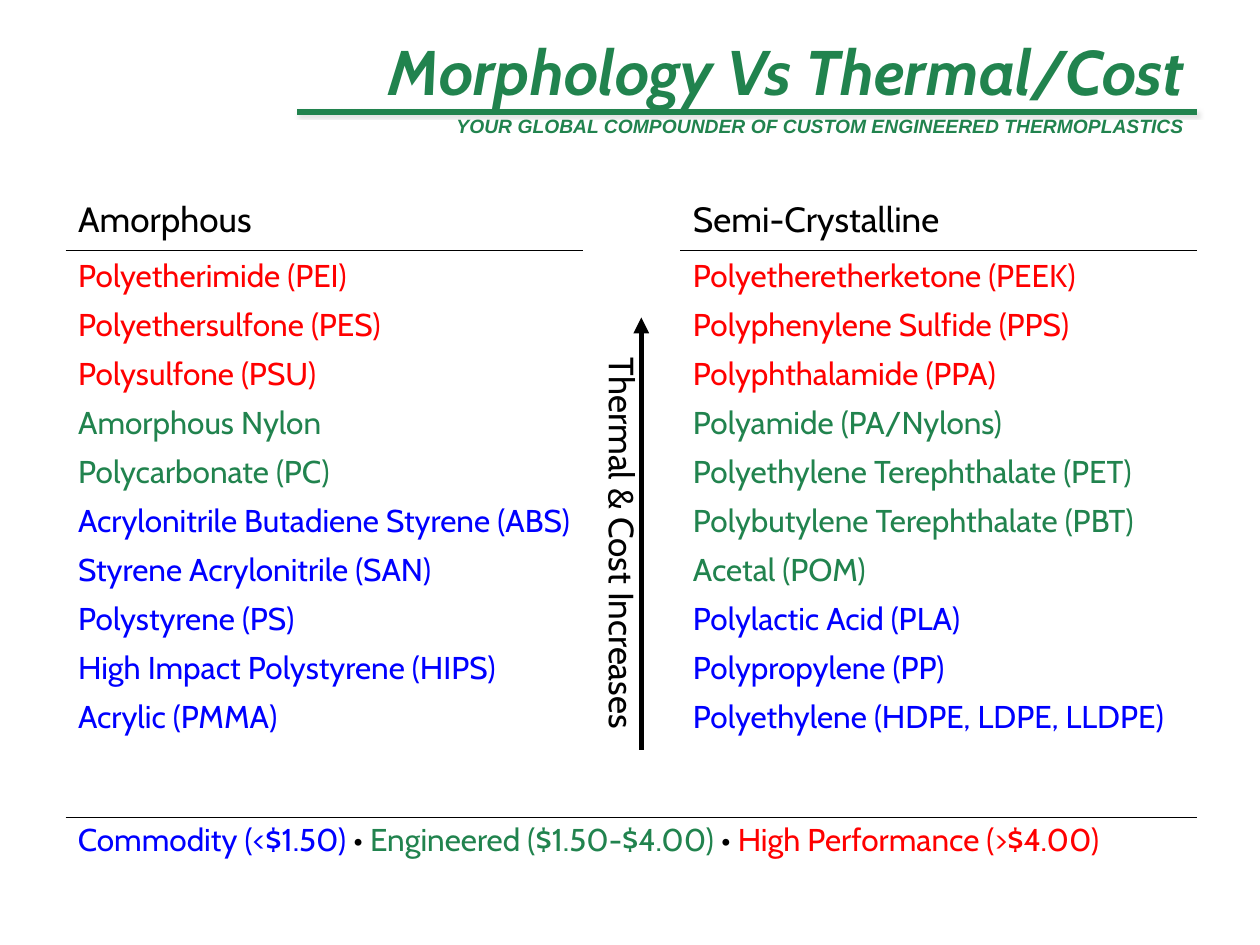
from dataclasses import dataclass

from lxml.etree import SubElement
from pptx import Presentation
from pptx.dml.color import RGBColor
from pptx.enum.shapes import MSO_CONNECTOR
from pptx.enum.text import MSO_ANCHOR, MSO_AUTO_SIZE, PP_ALIGN
from pptx.oxml.ns import qn
from pptx.util import Inches, Pt


@dataclass(frozen=True)
class Theme:
    black: str = "000000"
    green: str = "21834E"
    red: str = "FF0000"
    blue: str = "0000FF"
    shade: str = "808080"
    face: str = "Cabin"
    tagline_face: str = "Arial"
    title: int = 36
    heading: int = 20
    body: int = 18
    tagline: int = 11
    rule: int = 3
    border: int = 1
    plain_table: str = "{2D5ABB26-0587-4C30-8999-92F81FD0307C}"


class SlideBuilder:
    COLUMNS, ROWS = 100, 75

    def __init__(self, deck, theme):
        self.theme = theme
        self.column = deck.slide_width / self.COLUMNS
        self.row = deck.slide_height / self.ROWS
        self.slide = deck.slides.add_slide(deck.slide_layouts[6])

    def across(self, columns):
        return round(columns * self.column)

    def down(self, rows):
        return round(rows * self.row)

    def area(self, left, top, width, height):
        return self.across(left), self.down(top), self.across(width), self.down(height)

    def fill_paragraph(self, paragraph, runs, size, face=None, layout=None, **emphasis):
        for name, value in (layout or {}).items():
            setattr(paragraph, name, value)
        style = {"size": Pt(size), "name": face or self.theme.face, **emphasis}
        for words, color in runs:
            run = paragraph.add_run()
            run.text = words
            for name, value in style.items():
                setattr(run.font, name, value)
            run.font.color.rgb = RGBColor.from_string(color)

    def text(self, area, runs, size, frame_format=None, direction=None, **style):
        frame = self.slide.shapes.add_textbox(*self.area(*area)).text_frame
        settings = {"word_wrap": True, "auto_size": MSO_AUTO_SIZE.SHAPE_TO_FIT_TEXT}
        settings.update(frame_format or {})
        for name, value in settings.items():
            setattr(frame, name, value)
        if direction:
            frame._txBody.bodyPr.set("vert", direction)
        self.fill_paragraph(frame.paragraphs[0], runs, size, **style)

    def line(self, start, end, color, arrow=False, shadow=False):
        connector = self.slide.shapes.add_connector(
            MSO_CONNECTOR.STRAIGHT,
            self.across(start[0]), self.down(start[1]),
            self.across(end[0]), self.down(end[1]))
        connector.line.width = Pt(self.theme.rule)
        connector.line.color.rgb = RGBColor.from_string(color)
        if arrow:
            SubElement(connector.line._ln, qn("a:tailEnd"), type="triangle")
        effects = SubElement(connector._element.spPr, qn("a:effectLst"))
        if shadow:
            outer = SubElement(effects, qn("a:outerShdw"), blurRad=str(Pt(2)),
                               dist=str(Pt(1)), dir=str(45 * 60000))
            shade = SubElement(outer, qn("a:srgbClr"), val=self.theme.shade)
            SubElement(shade, qn("a:alpha"), val="25000")

    def table(self, left, top, widths, heights):
        area = self.area(left, top, sum(widths), sum(heights))
        graphic = self.slide.shapes.add_table(len(heights), len(widths), *area)
        table = graphic.table
        for name in ("first_row", "horz_banding"):
            setattr(table, name, False)
        table._tbl.tblPr.find(qn("a:tableStyleId")).text = self.theme.plain_table
        for column, width in zip(table.columns, widths):
            column.width = self.across(width)
        for row, height in zip(table.rows, heights):
            row.height = self.down(height)
        return table

    def cell(self, cell, lines=(), size=18, borders=(), space_after=0):
        for index, (words, color) in enumerate(lines):
            frame = cell.text_frame
            paragraph = frame.add_paragraph() if index else frame.paragraphs[0]
            self.fill_paragraph(paragraph, [(words, color)], size,
                                layout={"space_after": Pt(space_after)})
        properties = cell._tc.get_or_add_tcPr()
        for side in borders:
            edge = SubElement(properties, qn(f"a:ln{side}"), w=str(Pt(self.theme.border)))
            paint = SubElement(edge, qn("a:solidFill"))
            SubElement(paint, qn("a:srgbClr"), val=self.theme.black)
        cell.fill.background()


def main():
    theme = Theme()
    deck = Presentation()
    deck.slide_width, deck.slide_height = Inches(10), Inches(7.5)
    builder = SlideBuilder(deck, theme)

    right = {"alignment": PP_ALIGN.RIGHT}
    banner_left, banner_width = 23.6, 71.4
    builder.line((banner_left, 8.9), (banner_left + banner_width, 8.9),
                 theme.green, shadow=True)
    builder.text((banner_left, 8.6, banner_width, 2.9),
                 [("YOUR GLOBAL COMPOUNDER OF CUSTOM ENGINEERED THERMOPLASTICS", theme.green)],
                 theme.tagline, face=theme.tagline_face, layout=right, bold=True, italic=True)
    builder.text((banner_left, 0, banner_width, 9),
                 [("Morphology Vs Thermal/Cost", theme.green)], theme.title,
                 frame_format={"vertical_anchor": MSO_ANCHOR.BOTTOM,
                               "auto_size": MSO_AUTO_SIZE.NONE},
                 layout={**right, "line_spacing": 0.8}, bold=True, italic=True)

    families = {
        0: ("Amorphous", {
            theme.red: ["Polyetherimide (PEI)", "Polyethersulfone (PES)", "Polysulfone (PSU)"],
            theme.green: ["Amorphous Nylon", "Polycarbonate (PC)"],
            theme.blue: ["Acrylonitrile Butadiene Styrene (ABS)",
                         "Styrene Acrylonitrile (SAN)", "Polystyrene (PS)",
                         "High Impact Polystyrene (HIPS)", "Acrylic (PMMA)"],
        }),
        2: ("Semi-Crystalline", {
            theme.red: ["Polyetheretherketone (PEEK)", "Polyphenylene Sulfide (PPS)",
                        "Polyphthalamide (PPA)"],
            theme.green: ["Polyamide (PA/Nylons)", "Polyethylene Terephthalate (PET)",
                          "Polybutylene Terephthalate (PBT)", "Acetal (POM)"],
            theme.blue: ["Polylactic Acid (PLA)", "Polypropylene (PP)",
                         "Polyethylene (HDPE, LDPE, LLDPE)"],
        }),
    }
    margin = 5.2
    polymers = builder.table(margin, 15.3, (41.1, 7.7, 41), (4.6, 45, 10.1))
    for column, (family, tiers) in families.items():
        materials = [(name, color) for color, names in tiers.items() for name in names]
        builder.cell(polymers.cell(0, column), [(family, theme.black)],
                     theme.heading, borders="B")
        builder.cell(polymers.cell(1, column), materials, theme.body,
                     borders="TB", space_after=6)
    builder.cell(polymers.cell(0, 1))
    builder.cell(polymers.cell(1, 1), borders="B")
    polymers.cell(2, 0).merge(polymers.cell(2, 2))
    for column in range(3):
        builder.cell(polymers.cell(2, column), borders="T")

    builder.line((50.9, 59.5), (50.9, 25.2), theme.black, arrow=True)
    builder.text((46.2, 27.4, 5.4, 32.4), [("Thermal & Cost Increases", theme.black)],
                 theme.heading, direction="eaVert", layout=right)
    builder.text((margin, 64.6, 92.8, 4),
                 [("Commodity (<$1.50) ", theme.blue), ("• ", theme.black),
                  ("Engineered ($1.50-$4.00)", theme.green), (" • ", theme.black),
                  ("High Performance (>$4.00)", theme.red)], theme.body)

    deck.save("out.pptx")


if __name__ == "__main__":
    main()
